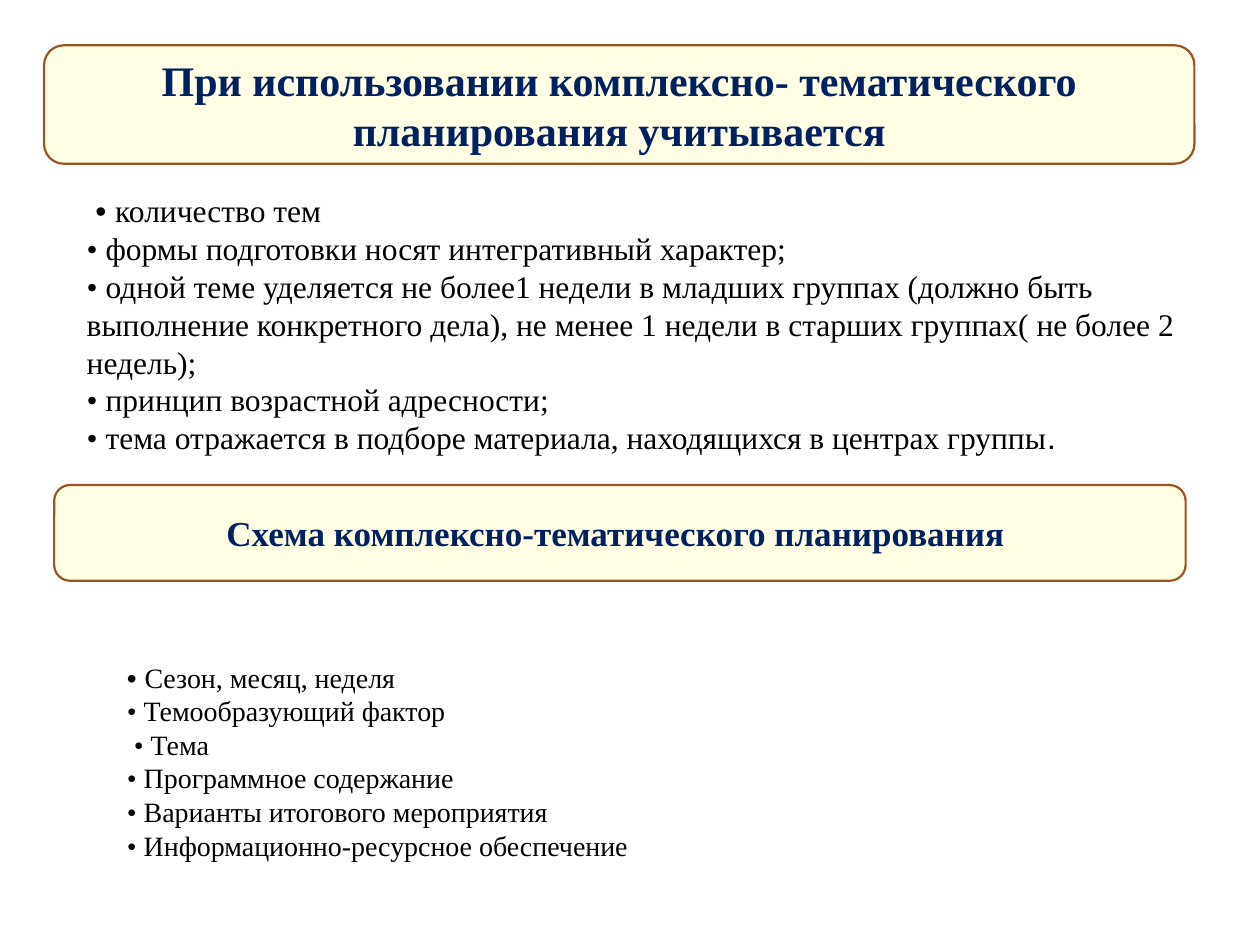
"""Build the slide on thematic planning: two banners, each with a list."""
from pptx import Presentation
from pptx.dml.color import RGBColor
from pptx.enum.shapes import MSO_SHAPE
from pptx.enum.text import MSO_ANCHOR, PP_ALIGN
from pptx.util import Inches, Pt

CREAM = RGBColor(0xFF, 0xFE, 0xE5)
BROWN = RGBColor(0x99, 0x54, 0x22)
NAVY = RGBColor(0x00, 0x20, 0x60)
BLACK = RGBColor(0, 0, 0)
SERIF, SANS = "Times New Roman", "Arial"

deck = Presentation()
deck.slide_width, deck.slide_height = Inches(10), Inches(7.5)
slide = deck.slides.add_slide(deck.slide_layouts[6])


def style(font, size, color, bold=False):
    font.name, font.size, font.bold = SERIF, Pt(size), bold
    font.color.rgb = color


banners = [
    ((0.35, 0.36, 9.13, 0.94), 24,
     "При использовании комплексно- тематического планирования учитывается"),
    ((0.43, 3.85, 8.98, 0.76), 20,
     "Схема комплексно-тематического планирования "),
]
for area, size, title in banners:
    panel = slide.shapes.add_shape(MSO_SHAPE.ROUNDED_RECTANGLE, *map(Inches, area))
    panel.shadow.inherit = False
    panel.fill.solid()
    panel.fill.fore_color.rgb = CREAM
    panel.line.color.rgb = BROWN
    panel.line.width = Pt(1.25)
    frame = panel.text_frame
    frame.word_wrap = True
    frame.vertical_anchor = MSO_ANCHOR.MIDDLE
    para = frame.paragraphs[0]
    para.text = title
    para.alignment = PP_ALIGN.CENTER
    style(para.font, size, NAVY, True)

lists = [
    ((0.59, 1.47, 8.9, 2.22), 18, [
        [(" • ", SANS), ("количество тем", SERIF)],
        [("• формы подготовки носят интегративный характер;", SERIF)],
        [("• одной теме уделяется не более1 недели в младших группах "
          "(должно быть выполнение конкретного дела), не менее 1 недели "
          "в старших группах( не более 2 недель);", SERIF)],
        [("• принцип возрастной адресности;", SERIF)],
        [("• тема отражается в подборе материала, находящихся в центрах группы",
          SERIF), (".", SANS)],
    ]),
    ((0.91, 5.19, 6.67, 1.72), 16, [
        [("• ", SANS), ("Сезон, месяц, неделя", SERIF)],
        [("• Темообразующий фактор", SERIF)],
        [(" • Тема", SERIF)],
        [("• Программное содержание", SERIF)],
        [("• Варианты итогового мероприятия", SERIF)],
        [("• Информационно-ресурсное обеспечение", SERIF)],
    ]),
]
for area, size, items in lists:
    frame = slide.shapes.add_textbox(*map(Inches, area)).text_frame
    frame.word_wrap = True
    for row, parts in enumerate(items):
        para = frame.add_paragraph() if row else frame.paragraphs[0]
        style(para.font, size, BLACK)
        for text, face in parts:
            run = para.add_run()
            run.text = text
            if face != SERIF:
                run.font.name = face

deck.save("out.pptx")
